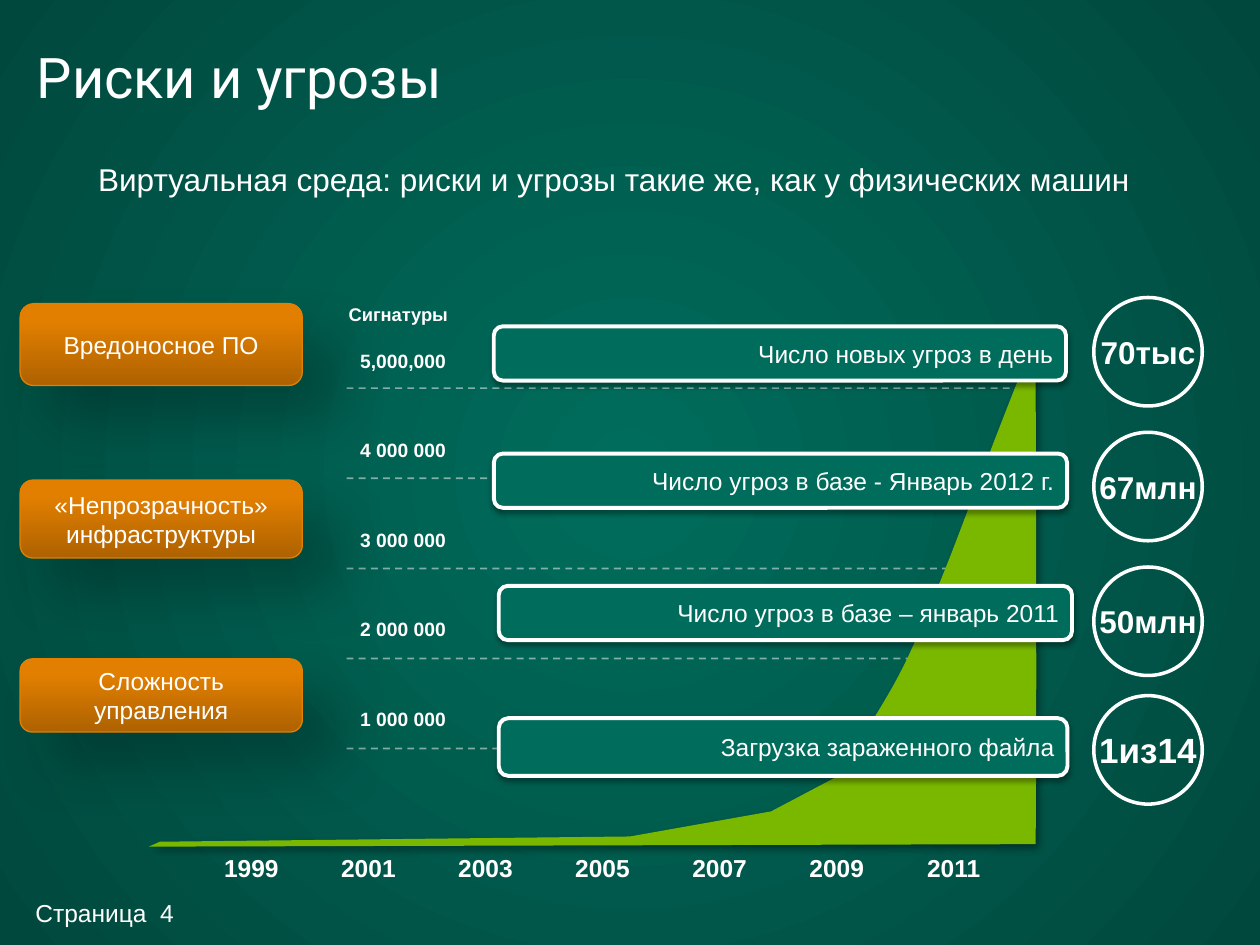
from dataclasses import dataclass

import pptx
import pptx.dml.color
import pptx.enum.dml
import pptx.enum.shapes
import pptx.enum.text
import pptx.oxml
import pptx.oxml.ns
import pptx.util

Pt = pptx.util.Pt
qn = pptx.oxml.ns.qn
ALIGN = pptx.enum.text.PP_ALIGN
SHAPES = pptx.enum.shapes.MSO_SHAPE
MIDDLE = pptx.enum.text.MSO_ANCHOR.MIDDLE
TOP = pptx.enum.text.MSO_ANCHOR.TOP

COLORS = {
    "white": "FFFFFF",
    "black": "000000",
    "teal": "006D5C",
    "dark teal": "00483D",
    "green": "7AB800",
    "deep orange": "AE6200",
    "orange": "E27F00",
    "light orange": "E38000",
    "orange edge": "E48000",
}


@dataclass
class Box:
    left: float
    top: float
    width: float
    height: float

    def lengths(self) -> tuple:
        return Pt(self.left), Pt(self.top), Pt(self.width), Pt(self.height)


@dataclass
class Shadow:
    opacity: int
    blur: float
    distance: float
    angle: int


@dataclass
class Fact:
    bar: Box
    label: str
    circle_top: float
    value: str
    value_size: float = 18


@dataclass
class Problem:
    top: float
    height: float
    label: str


FACTS = [
    Fact(Box(282.2, 186.5, 327, 31), "Число новых угроз в день", 170, "70тыс"),
    Fact(Box(282.2, 259.2, 327.6, 31), "Число угроз в базе - Январь 2012 г.", 247, "67млн"),
    Fact(Box(285, 334.8, 327.6, 31), "Число угроз в базе – январь 2011", 324, "50млн"),
    Fact(Box(285, 410.4, 325, 33), "Загрузка зараженного файла", 397.5, "1из14", 20),
]
PROBLEMS = [
    Problem(173.5, 46.8, "Вредоносное ПО"),
    Problem(274.3, 44.6, "«Непрозрачность» инфраструктуры"),
    Problem(376.5, 41.8, "Сложность управления"),
]
SIGNATURE_COUNTS = ["5,000,000", "4 000 000", "3 000 000", "2 000 000", "1 000 000"]
GRID_LEFT, GRID_RIGHT, GRID_TOP, GRID_STEP = 198, 592.5, 221.8, 51.5

BAR_SHADOW = Shadow(35, 3.1, 1.8, 90)
PROBLEM_SHADOW = Shadow(23, 32, 27, 45)
AREA_SHADOW = Shadow(40, 4, 3, 45)


def rgb(name: str):
    return pptx.dml.color.RGBColor.from_string(COLORS[name])


def add_xml(parent, xml: str) -> None:
    namespace = pptx.oxml.ns.nsdecls("a")
    head, tail = xml.split(">", 1)
    opening = f"{head[:-1]} {namespace}/" if head.endswith("/") else f"{head} {namespace}"
    parent.append(pptx.oxml.parse_xml(f"{opening}>{tail}"))


def set_gradient(gradient, stops: list, direction: str) -> None:
    """Give a gradFill element its stops (percent, colour) and direction XML."""
    for child in list(gradient):
        gradient.remove(child)
    stop_xml = "".join(
        f'<a:gs pos="{percent * 1000}"><a:srgbClr val="{COLORS[name]}"/></a:gs>'
        for percent, name in stops
    )
    add_xml(gradient, f"<a:gsLst>{stop_xml}</a:gsLst>")
    add_xml(gradient, direction)


def add_shadow(shape, shadow: Shadow) -> None:
    """Append the shadow; call it once fill and line are set."""
    add_xml(
        shape.element.spPr,
        f'<a:effectLst><a:outerShdw blurRad="{Pt(shadow.blur)}" dist="{Pt(shadow.distance)}"'
        f' dir="{shadow.angle * 60000}" algn="ctr" rotWithShape="0">'
        f'<a:srgbClr val="{COLORS["black"]}"><a:alpha val="{shadow.opacity * 1000}"/>'
        "</a:srgbClr></a:outerShdw></a:effectLst>",
    )


def set_text(shape, text: str, size: float, alignment=ALIGN.LEFT, bold: bool = False,
             font: str = "Arial", anchor=MIDDLE, wrap: bool = True) -> None:
    frame = shape.text_frame
    frame.text = text
    frame.word_wrap = wrap
    frame.vertical_anchor = anchor
    paragraph = frame.paragraphs[0]
    paragraph.alignment = alignment
    run_font = paragraph.runs[0].font
    run_font.name, run_font.size, run_font.bold = font, Pt(size), bold
    run_font.color.rgb = rgb("white")


def clear_margins(shape) -> None:
    frame = shape.text_frame
    frame.margin_left = frame.margin_right = frame.margin_top = frame.margin_bottom = 0


def add_label(slide, box: Box, text: str, size: float, **style):
    label = slide.shapes.add_textbox(*box.lengths())
    set_text(label, text, size, **style)
    return label


def add_outlined(slide, kind, box: Box, line_color: str, line_width: float):
    shape = slide.shapes.add_shape(kind, *box.lengths())
    shape.line.color.rgb = rgb(line_color)
    shape.line.width = Pt(line_width)
    return shape


def add_grid_line(slide, top: float) -> None:
    line = slide.shapes.add_connector(
        pptx.enum.shapes.MSO_CONNECTOR.STRAIGHT,
        Pt(GRID_LEFT), Pt(top), Pt(GRID_RIGHT), Pt(top))
    line.line.color.rgb = rgb("white")
    line.line.width = Pt(1)
    line.line.dash_style = pptx.enum.dml.MSO_LINE.DASH
    add_xml(line.element.spPr.find(".//" + qn("a:srgbClr")), '<a:alpha val="50000"/>')
    add_xml(line.element.spPr, "<a:effectLst/>")


def curve_points(start, control_1, control_2, end, steps: int = 16) -> list:
    """Points along a cubic Bezier curve, without its start."""
    points = []
    for step in range(1, steps + 1):
        t = step / steps
        weights = ((1 - t) ** 3, 3 * t * (1 - t) ** 2, 3 * t * t * (1 - t), t ** 3)
        knots = (start, control_1, control_2, end)
        points.append(tuple(sum(w * k[axis] for w, k in zip(weights, knots)) for axis in (0, 1)))
    return points


def add_growth_area(slide) -> None:
    bend, middle, peak, base = (480.2, 442.8), (527.8, 354.2), (591.8, 192.2), (591.8, 482.4)
    points = [(91.4, 481), (360, 478), (440.6, 463.7), bend]
    points += curve_points(bend, (496, 413.3), (513.4, 393), middle)
    points += curve_points(middle, (545.8, 314.6), (555, 283), peak)
    points += curve_points(peak, (591.8, 250.6), (592.6, 384.5), base)
    points.append((85, 483.8))
    lengths = [(Pt(x), Pt(y)) for x, y in points]
    builder = slide.shapes.build_freeform(*lengths[0])
    builder.add_line_segments(lengths[1:], close=True)
    area = builder.convert_to_shape()
    area.fill.solid()
    area.fill.fore_color.rgb = rgb("green")
    area.line.fill.background()
    add_shadow(area, AREA_SHADOW)


def add_fact(slide, fact: Fact) -> None:
    bar = add_outlined(slide, SHAPES.ROUNDED_RECTANGLE, fact.bar, "white", 2.25)
    bar.fill.solid()
    bar.fill.fore_color.rgb = rgb("teal")
    add_shadow(bar, BAR_SHADOW)
    set_text(bar, fact.label, 14, ALIGN.RIGHT)
    bar.text_frame.margin_right = Pt(5.7)

    circle = add_outlined(slide, SHAPES.OVAL, Box(625, fact.circle_top, 62, 62), "white", 2)
    circle.fill.background()
    circle.shadow.inherit = False
    set_text(circle, fact.value, fact.value_size, ALIGN.CENTER, bold=True, wrap=False)
    clear_margins(circle)


def add_problem(slide, problem: Problem) -> None:
    box = Box(11.5, problem.top, 161.3, problem.height)
    shape = add_outlined(slide, SHAPES.ROUNDED_RECTANGLE, box, "orange edge", 0.75)
    shape.fill.gradient()
    set_gradient(shape.element.spPr.find(qn("a:gradFill")),
                 [(0, "deep orange"), (80, "orange"), (100, "light orange")],
                 '<a:lin ang="16200000" scaled="0"/>')
    add_shadow(shape, PROBLEM_SHADOW)
    set_text(shape, problem.label, 14, ALIGN.CENTER)


def main() -> None:
    presentation = pptx.Presentation()
    presentation.slide_width, presentation.slide_height = Pt(720), Pt(540)
    slide = presentation.slides.add_slide(presentation.slide_layouts[6])
    slide.background.fill.gradient()
    set_gradient(slide.element.find(".//" + qn("a:gradFill")),
                 [(0, "teal"), (100, "dark teal")],
                 '<a:path path="circle"><a:fillToRect l="50000" t="50000" r="50000" b="50000"/></a:path>')

    clear_margins(add_label(slide, Box(20.2, 507, 96, 28.8), "Страница  4", 14))
    clear_margins(add_label(slide, Box(21, 13, 678, 60.5), "Риски и угрозы", 32, font="Roboto"))
    add_label(slide, Box(49, 88, 610, 29), "Виртуальная среда: риски и угрозы такие же, как у физических машин",
              18, anchor=TOP, wrap=False)

    add_label(slide, Box(192.2, 170, 72, 20), "Сигнатуры", 10.5, bold=True, anchor=TOP, wrap=False)
    for row, count in enumerate(SIGNATURE_COUNTS):
        add_grid_line(slide, GRID_TOP + row * GRID_STEP)
        add_label(slide, Box(GRID_LEFT, 195.8 + row * 51.2, 64, 21), count, 11,
                  alignment=ALIGN.RIGHT, bold=True, anchor=TOP, wrap=False)
    for column, year in enumerate(range(1999, 2012, 2)):
        add_label(slide, Box(120.6 + column * 66.9, 484, 46, 24.5), str(year), 14,
                  alignment=ALIGN.CENTER, bold=True, anchor=TOP, wrap=False)

    add_growth_area(slide)
    for fact in FACTS:
        add_fact(slide, fact)
    for problem in PROBLEMS:
        add_problem(slide, problem)
    presentation.save("out.pptx")


if __name__ == "__main__":
    main()
